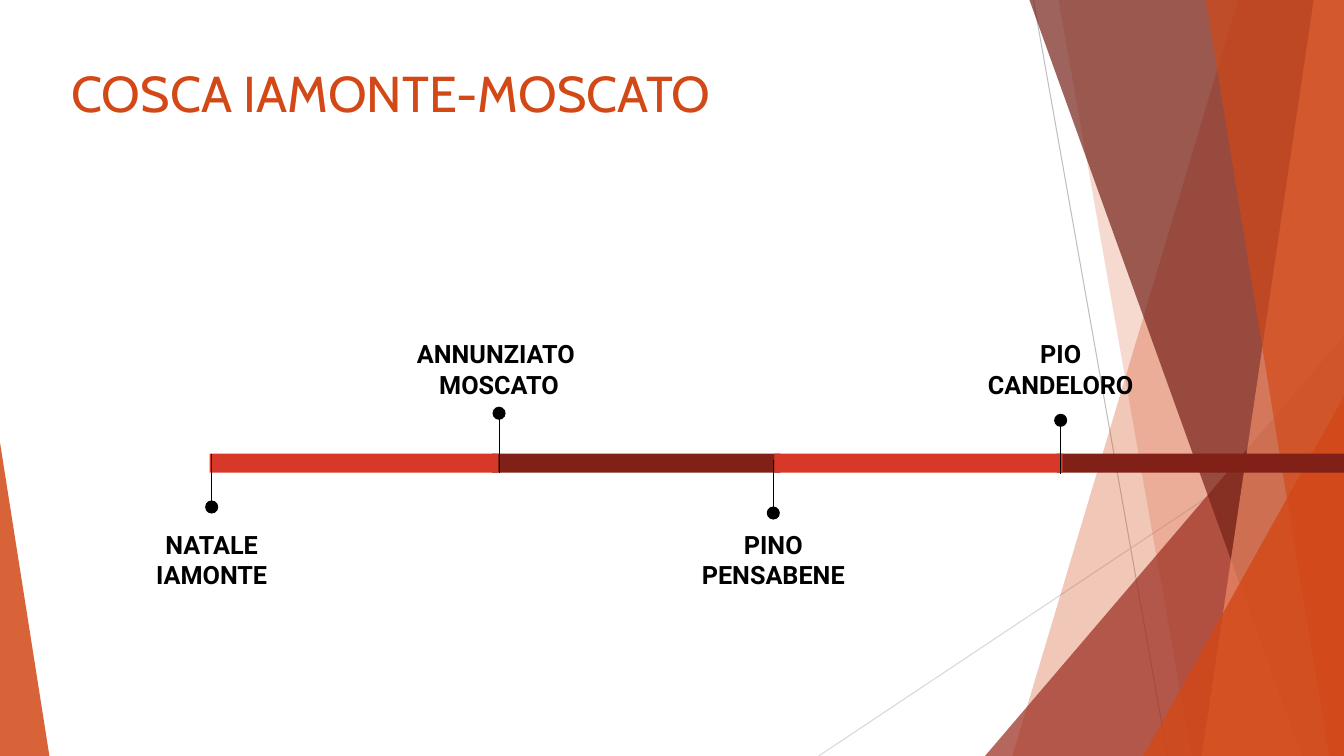
"""Build a timeline slide of four names over a faceted orange background."""
from lxml import etree
from pptx import Presentation
from pptx.dml.color import RGBColor
from pptx.enum.shapes import MSO_CONNECTOR, MSO_SHAPE
from pptx.enum.text import MSO_ANCHOR, PP_ALIGN
from pptx.oxml.ns import qn
from pptx.util import Inches, Pt

STRAIGHT = MSO_CONNECTOR.STRAIGHT
TRIANGLE, RECTANGLE, OVAL = MSO_SHAPE.ISOSCELES_TRIANGLE, MSO_SHAPE.RECTANGLE, MSO_SHAPE.OVAL
TOP, CENTER, LEFT = MSO_ANCHOR.TOP, PP_ALIGN.CENTER, PP_ALIGN.LEFT

COLORS = {
    "orange": "D34817", "rust": "9B2D1F", "maroon": "742117", "salmon": "EF8B67",
    "gray": "BFBFBF", "pale": "D8D8D8", "dark": "802017", "red": "D83829", "black": "000000",
}
WIDTH, HEIGHT = 13.33, 7.5
TITLE = "COSCA IAMONTE-MOSCATO"

RAYS = [((10.25, 0), (11.58, HEIGHT), "gray"), ((WIDTH, 4.03), (8.12, HEIGHT), "pale")]
BANDS_BEHIND = [(12.28, 10.04, "orange", 30), (10.5, 11.82, "orange", 20)]
BANDS_FRONT = [(10.21, 12.91, "maroon", 70), (13.03, 11.92, "salmon", 70),
               (11.96, 13.18, "orange", 65)]
WEDGE_BEHIND = (9.77, 3.33, 3.56, 1, "rust", 72)
WEDGES_FRONT = [(11.34, 3.93, 1.99, 1, "orange", 80), (0, 4.39, 0.49, 0, "orange", 85)]

BAR_LEFT, BAR_TOP, BAR_STEP, BAR_WIDTH, BAR_HEIGHT = 2.08, 4.5, 2.8, 2.86, 0.19
BAR_ORDER = [(1, "dark"), (3, "dark"), (2, "red"), (0, "red")]
DOT = 0.13
LABEL_WIDTH, LABEL_HEIGHT, LABEL_INSET = 2.04, 0.87, 0.13
LABEL_ABOVE, LABEL_BELOW = 3.23, 5.12
PEOPLE = [
    (["NATALE IAMONTE"], 2.1, 1.08, LABEL_BELOW, 5.03, 4.5),
    (["ANNUNZIATO ", "MOSCATO"], 4.95, 3.93, LABEL_ABOVE, 4.1, 4.69),
    (["PINO PENSABENE"], 7.67, 6.65, LABEL_BELOW, 5.09, 4.56),
    (["PIO CANDELORO"], 10.52, 9.5, LABEL_ABOVE, 4.17, 4.7),
]


def rgb(name):
    return RGBColor.from_string(COLORS[name])


def paint(shape, color, opacity=100):
    shape.shadow.inherit = False
    shape.fill.solid()
    shape.fill.fore_color.rgb = rgb(color)
    shape.line.fill.background()
    if opacity < 100:
        tint = shape.fill._xPr.find(qn("a:solidFill"))[0]
        etree.SubElement(tint, qn("a:alpha")).set("val", str(opacity * 1000))


def add_preset(slide, preset, left, top, width, height, color, opacity=100):
    shape = slide.shapes.add_shape(
        preset, Inches(left), Inches(top), Inches(width), Inches(height))
    paint(shape, color, opacity)
    return shape


def add_line(slide, start, end, color):
    line = slide.shapes.add_connector(STRAIGHT, *(Inches(v) for v in (*start, *end)))
    line.line.color.rgb = rgb(color)
    line.line.width = Pt(0.75)
    etree.SubElement(line._element.spPr, qn("a:effectLst"))


def add_band(slide, top_x, bottom_x, color, opacity):
    corners = [(WIDTH, 0), (WIDTH, HEIGHT), (bottom_x, HEIGHT)]
    builder = slide.shapes.build_freeform(Inches(top_x), 0)
    builder.add_line_segments([(Inches(x), Inches(y)) for x, y in corners], close=True)
    paint(builder.convert_to_shape(), color, opacity)


def add_wedge(slide, left, top, width, apex, color, opacity):
    wedge = add_preset(slide, TRIANGLE, left, top, width, HEIGHT - top, color, opacity)
    wedge.adjustments[0] = apex


def write(paragraph, text, font, size, color, bold, align):
    paragraph.alignment = align
    run = paragraph.add_run()
    run.text = text
    run.font.name, run.font.size, run.font.bold = font, Pt(size), bold
    run.font.color.rgb = rgb(color)


def add_title(slide):
    title = slide.shapes.title
    title.left, title.top, title.width, title.height = (
        Inches(v) for v in (0.61, 0.57, 9.4, 1.44))
    frame = title.text_frame
    frame.vertical_anchor = TOP
    write(frame.paragraphs[0], TITLE, "Cabin", 36, "orange", False, LEFT)


def add_label(slide, lines, left, top):
    label = slide.shapes.add_textbox(
        Inches(left), Inches(top), Inches(LABEL_WIDTH), Inches(LABEL_HEIGHT))
    frame = label.text_frame
    frame.word_wrap = True
    frame.margin_left = frame.margin_right = Inches(LABEL_INSET)
    frame.margin_top = frame.margin_bottom = Inches(LABEL_INSET)
    for i, text in enumerate(lines):
        paragraph = frame.add_paragraph() if i else frame.paragraphs[0]
        write(paragraph, text, "Roboto", 18, "black", True, CENTER)


def add_background(slide):
    for ray in RAYS:
        add_line(slide, *ray)
    for band in BANDS_BEHIND:
        add_band(slide, *band)
    add_wedge(slide, *WEDGE_BEHIND)
    for band in BANDS_FRONT:
        add_band(slide, *band)
    for wedge in WEDGES_FRONT:
        add_wedge(slide, *wedge)


def add_timeline(slide):
    for position, color in BAR_ORDER:
        left = BAR_LEFT + position * BAR_STEP
        width = min(BAR_WIDTH, WIDTH - left)
        add_preset(slide, RECTANGLE, left, BAR_TOP, width, BAR_HEIGHT, color)
    for lines, pin_x, label_left, label_top, dot_y, bar_y in PEOPLE:
        add_label(slide, lines, label_left, label_top)
        add_line(slide, (pin_x, dot_y), (pin_x, bar_y), "black")
        add_preset(slide, OVAL, pin_x - DOT / 2, dot_y - DOT / 2, DOT, DOT, "black")


def main():
    deck = Presentation()
    deck.slide_width, deck.slide_height = Inches(WIDTH), Inches(HEIGHT)
    slide = deck.slides.add_slide(deck.slide_layouts[5])
    add_background(slide)
    add_title(slide)
    add_timeline(slide)
    deck.save("out.pptx")


if __name__ == "__main__":
    main()
